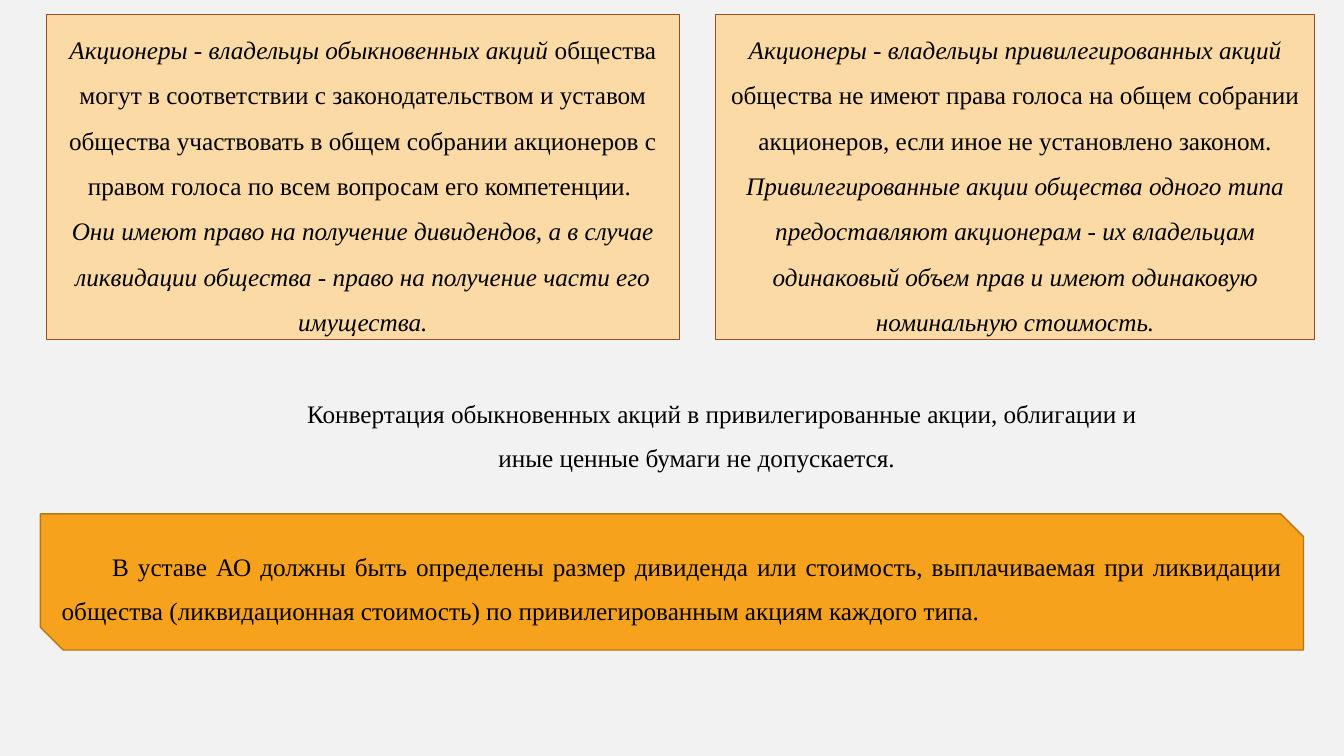
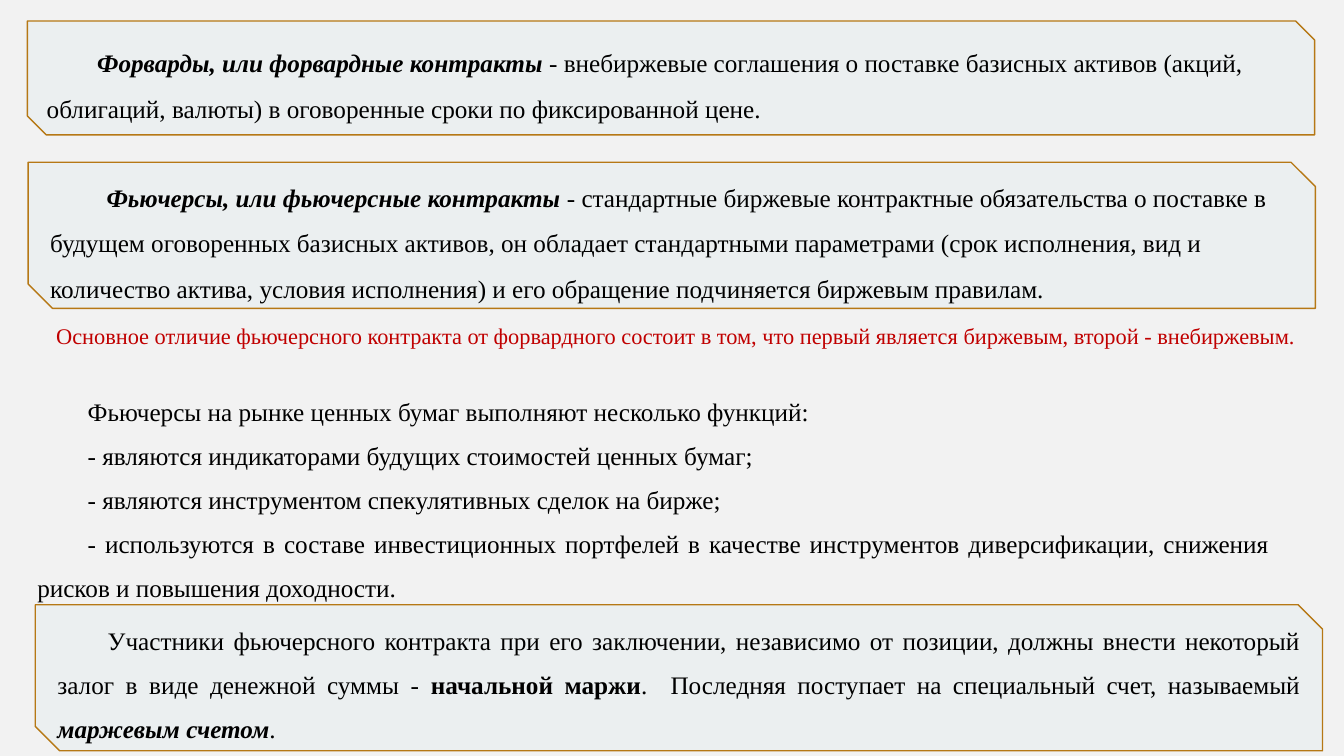
from pptx import Presentation
from pptx import util as u
from pptx.dml.color import RGBColor
from pptx.enum import shapes, text

FONT = "Times New Roman"
BACKGROUND, BLACK, RED = "F2F2F2", "000000", "C00000"
PEACH, ORANGE, PALE = "FBDAA5", "F6A21D", "EBEFF0"
BROWN, OCHRE = "974D25", "B67815"
RECT = shapes.MSO_SHAPE.RECTANGLE
SNIP = shapes.MSO_SHAPE.SNIP_2_DIAG_RECTANGLE
LEFT, CENTER, JUSTIFY = text.PP_ALIGN.LEFT, text.PP_ALIGN.CENTER, text.PP_ALIGN.JUSTIFY
ITALIC, BOLD = {"italic": True}, {"bold": True}
TERM = {**BOLD, **ITALIC}
INDENT = 1.27
PANEL_WIDTH = 32.44


def rgb(value):
    """Return the colour for a hex string."""
    return RGBColor.from_string(value)


def write(sp, paragraphs, align, spacing=1.45, indent=0, size=18, color=BLACK, anchor="TOP"):
    """Fill a shape with paragraphs, each a list of (text, format) runs."""
    tf = sp.text_frame
    tf.word_wrap = True
    tf.vertical_anchor = getattr(text.MSO_ANCHOR, anchor)
    for i, runs in enumerate(paragraphs):
        p = tf.add_paragraph() if i else tf.paragraphs[0]
        p.alignment, p.line_spacing = align, spacing
        if indent:
            p._p.get_or_add_pPr().set("indent", str(u.Cm(indent)))
        for words, style in runs:
            r = p.add_run()
            r.text = words
            for name, value in {"name": FONT, "size": u.Pt(size), **style}.items():
                setattr(r.font, name, value)
            r.font.color.rgb = rgb(color)


def add_panel(s, kind, box, fill, line, width, paragraphs, align, **layout):
    """Add a filled, outlined shape with text."""
    sp = s.shapes.add_shape(kind, *map(u.Cm, box))
    sp.shadow.inherit = False
    sp.fill.solid()
    sp.fill.fore_color.rgb = rgb(fill)
    sp.line.color.rgb = rgb(line)
    sp.line.width = u.Pt(width)
    write(sp, paragraphs, align, **layout)


def add_holders(s, left, width, paragraphs):
    """Add a panel about one class of shareholders."""
    add_panel(s, RECT, (left, 0.36, width, 8.2), PEACH, BROWN, 0.75, paragraphs, CENTER, spacing=1.5)


def add_snipped(s, box, fill, runs, align, **layout):
    """Add a panel with two snipped corners and one paragraph."""
    add_panel(s, SNIP, box, fill, OCHRE, 1, [runs], align, anchor="MIDDLE", **layout)


def add_text(s, box, paragraphs, align, **layout):
    """Add a plain text box."""
    write(s.shapes.add_textbox(*map(u.Cm, box)), paragraphs, align, **layout)


def build_shares(s):
    """Build the slide on ordinary and preference shares."""
    add_holders(s, 1.17, 15.95, [
        [("Акционеры - владельцы обыкновенных акций", ITALIC),
         (" общества могут в соответствии с законодательством и уставом общества участвовать "
          "в общем собрании акционеров с правом голоса по всем вопросам его компетенции. ", {})],
        [("Они имеют право на получение дивидендов, а в случае ликвидации общества - "
          "право на получение части его имущества.", ITALIC)]])
    add_holders(s, 18.03, 15.11, [
        [("Акционеры - владельцы привилегированных акций ", ITALIC),
         ("общества не имеют права голоса на общем собрании акционеров, "
          "если иное не установлено законом.", {})],
        [("Привилегированные акции общества одного типа предоставляют акционерам - "
          "их владельцам одинаковый объем прав и имеют одинаковую номинальную стоимость.", ITALIC)]])
    add_text(s, (5.89, 9.58, 23.34, 2.36), [
        [("Конвертация обыкновенных акций в привилегированные акции, облигации "
          "и иные ценные бумаги не допускается.", {})]], CENTER, indent=INDENT)
    add_snipped(s, (1.02, 12.95, 31.83, 3.43), ORANGE, [
        ("В уставе АО должны быть определены размер дивиденда или стоимость, выплачиваемая "
         "при ликвидации общества (ликвидационная стоимость) по привилегированным акциям "
         "каждого типа.", {})], JUSTIFY, indent=INDENT)


def build_futures(s):
    """Build the slide on forwards and futures."""
    add_snipped(s, (0.69, 0.53, PANEL_WIDTH, 2.87), PALE, [
        ("Форварды, или форвардные контракты ", TERM),
        ("- внебиржевые соглашения о поставке базисных активов (акций, облигаций, валюты) "
         "в оговоренные сроки по фиксированной цене.", {})], LEFT, spacing=1.5, indent=INDENT)
    add_snipped(s, (0.71, 4.09, PANEL_WIDTH, 3.68), PALE, [
        ("Фьючерсы, или фьючерсные контракты ", TERM),
        ("- стандартные биржевые контрактные обязательства о поставке в будущем оговоренных "
         "базисных активов, он обладает стандартными параметрами (срок исполнения, вид и "
         "количество актива, условия исполнения) и его обращение подчиняется биржевым "
         "правилам.", {})], LEFT, spacing=1.5, indent=1.42)
    add_text(s, (0.71, 8, 32.79, 0.94), [
        [("Основное отличие фьючерсного контракта от форвардного состоит в том, что первый "
          "является биржевым, второй - внебиржевым. ", {})]],
        CENTER, spacing=1.0, size=16, color=RED)
    functions = (
        "Фьючерсы на рынке ценных бумаг выполняют несколько функций:",
        "- являются индикаторами будущих стоимостей ценных бумаг;",
        "- являются инструментом спекулятивных сделок на бирже;",
        "- используются в составе инвестиционных портфелей в качестве инструментов "
        "диверсификации, снижения рисков и повышения доходности.")
    add_text(s, (0.69, 9.53, 31.55, 5.72), [[(line, {})] for line in functions],
             JUSTIFY, indent=INDENT)
    add_snipped(s, (0.89, 15.24, PANEL_WIDTH, 3.68), PALE, [
        ("Участники фьючерсного контракта при его заключении, независимо от позиции, должны "
         "внести некоторый залог в виде денежной суммы - ", {}),
        ("начальной маржи", BOLD),
        (".  Последняя поступает на специальный счет, называемый ", {}),
        ("маржевым счетом", TERM), (".", {})], JUSTIFY, indent=INDENT)


def main():
    """Build and save the presentation."""
    prs = Presentation()
    prs.slide_width, prs.slide_height = u.Cm(33.87), u.Cm(19.05)
    fill = prs.slide_master.background.fill
    fill.solid()
    fill.fore_color.rgb = rgb(BACKGROUND)
    for build in (build_shares, build_futures):
        build(prs.slides.add_slide(prs.slide_layouts[6]))
    prs.save("out.pptx")


if __name__ == "__main__":
    main()
